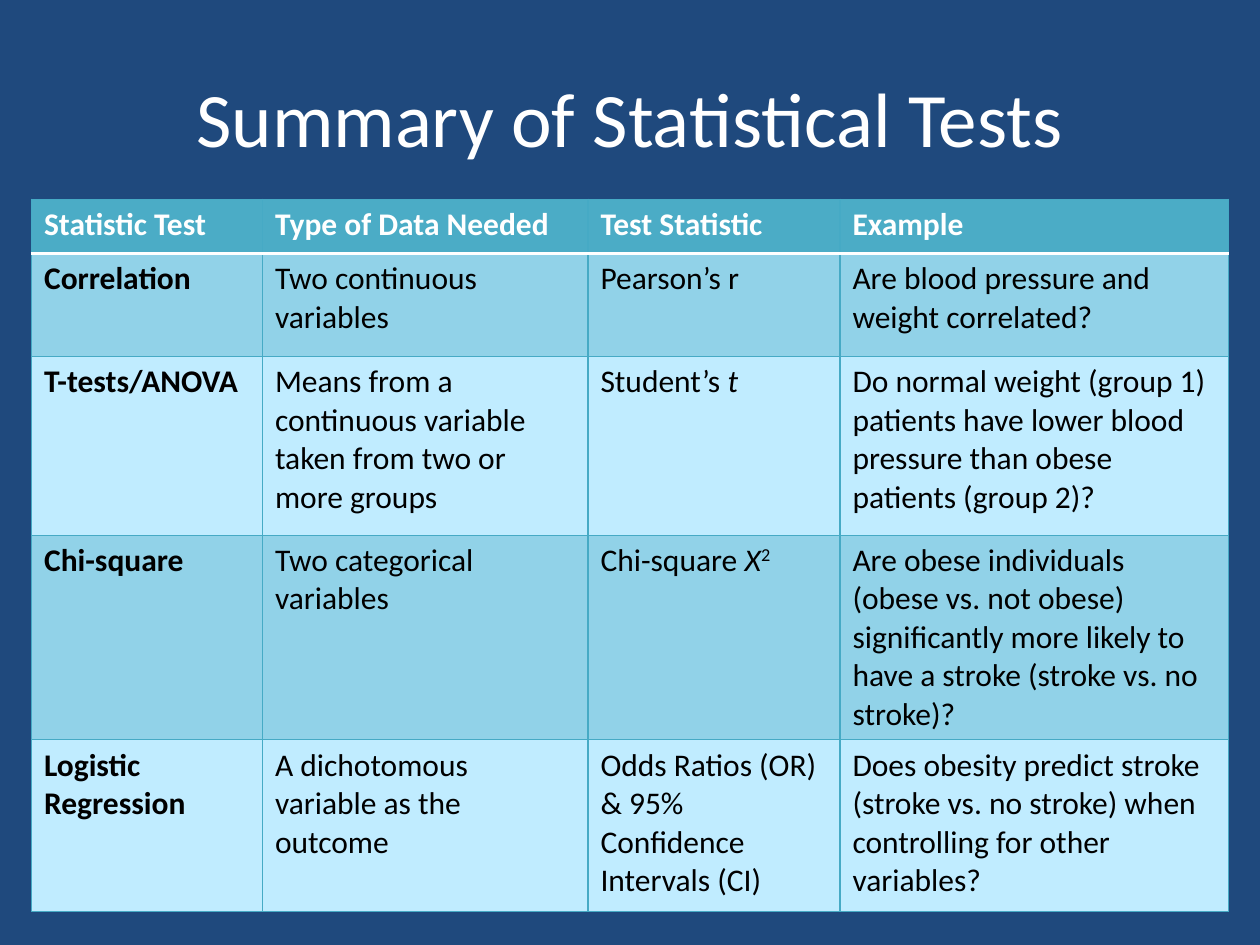
from lxml.etree import SubElement
from pptx import Presentation
from pptx.dml.color import RGBColor
from pptx.enum.text import MSO_ANCHOR, PP_ALIGN
from pptx.oxml.ns import qn
from pptx.util import Pt

COLORS = {
    "background": "1F497D",
    "header": "4BACC6",
    "dark_band": "91D2E8",
    "light_band": "C0ECFF",
    "grid": "46AAC5",
    "white": "FFFFFF",
    "black": "000000",
}
FONT = "Calibri"
COLUMN_WIDTHS = [132, 186, 144, 222]
ROW_HEIGHTS = [31, 59, 102, 117, 98]

# A cell is a list of (text, style) runs, or a plain string.
ROWS = [
    ["Statistic Test", "Type of Data Needed", "Test Statistic", "Example"],
    ["Correlation", "Two continuous variables", "Pearson’s r",
     "Are blood pressure and weight correlated?"],
    ["T-tests/ANOVA",
     "Means from a continuous variable taken from two or more groups",
     [("Student’s ", None), ("t", "italic")],
     "Do normal weight (group 1) patients have lower blood pressure "
     "than obese patients (group 2)?"],
    ["Chi-square", "Two categorical variables",
     [("Chi-square ", None), ("X", "italic"), ("2", "superscript")],
     "Are obese individuals (obese vs. not obese) significantly more likely "
     "to have a stroke (stroke vs. no stroke)?"],
    ["Logistic Regression", "A dichotomous variable as the outcome",
     "Odds Ratios (OR) & 95% Confidence Intervals (CI)",
     "Does obesity predict stroke (stroke vs. no stroke) when controlling "
     "for other variables?"],
]


def color(name):
    return RGBColor.from_string(COLORS[name])


def add_run(para, text, size, color_name, bold=False, style=None):
    span = para.add_run()
    span.text = text
    span.font.name = FONT
    span.font.size = Pt(size)
    span.font.bold = bold
    span.font.color.rgb = color(color_name)
    if style == "italic":
        span.font.italic = True
    elif style == "superscript":
        span.font._element.set("baseline", "30000")


def add_title(page, text):
    box = page.shapes.add_textbox(Pt(36), Pt(21.6), Pt(648), Pt(90))
    frame = box.text_frame
    frame.word_wrap = True
    frame.vertical_anchor = MSO_ANCHOR.MIDDLE
    para = frame.paragraphs[0]
    para.alignment = PP_ALIGN.CENTER
    add_run(para, text, 44, "white")


def add_border(cell, side, color_name, width):
    properties = cell._tc.get_or_add_tcPr()
    line = SubElement(properties, qn(f"a:ln{side}"), w=str(Pt(width)))
    fill = SubElement(line, qn("a:solidFill"))
    SubElement(fill, qn("a:srgbClr"), val=COLORS[color_name])


def style_cell(cell, row_index):
    """Draw the borders first, because the schema puts them before the fill."""
    white_side = {0: "B", 1: "T"}.get(row_index)
    for side in "LRTB":
        if side == white_side:
            add_border(cell, side, "white", 2)
        else:
            add_border(cell, side, "grid", 0.75)
    band = "dark_band" if row_index % 2 else "light_band"
    cell.fill.solid()
    cell.fill.fore_color.rgb = color("header" if row_index == 0 else band)


def add_tests_table(page):
    frame = page.shapes.add_table(
        len(ROWS), len(COLUMN_WIDTHS), Pt(18), Pt(113.8),
        Pt(sum(COLUMN_WIDTHS)), Pt(sum(ROW_HEIGHTS)))
    table = frame.table
    table.horz_banding = False
    for column, width in zip(table.columns, COLUMN_WIDTHS):
        column.width = Pt(width)
    for row, height in zip(table.rows, ROW_HEIGHTS):
        row.height = Pt(height)
    for row_index, contents in enumerate(ROWS):
        for column_index, content in enumerate(contents):
            cell = table.cell(row_index, column_index)
            style_cell(cell, row_index)
            runs = [(content, None)] if isinstance(content, str) else content
            for text, style in runs:
                add_run(cell.text_frame.paragraphs[0], text, 18,
                        "white" if row_index == 0 else "black",
                        bold=row_index == 0 or column_index == 0, style=style)


def main():
    deck = Presentation()
    deck.slide_width, deck.slide_height = Pt(720), Pt(540)
    page = deck.slides.add_slide(deck.slide_layouts[6])
    page.background.fill.solid()
    page.background.fill.fore_color.rgb = color("background")
    add_title(page, "Summary of Statistical Tests")
    add_tests_table(page)
    deck.save("out.pptx")


if __name__ == "__main__":
    main()
